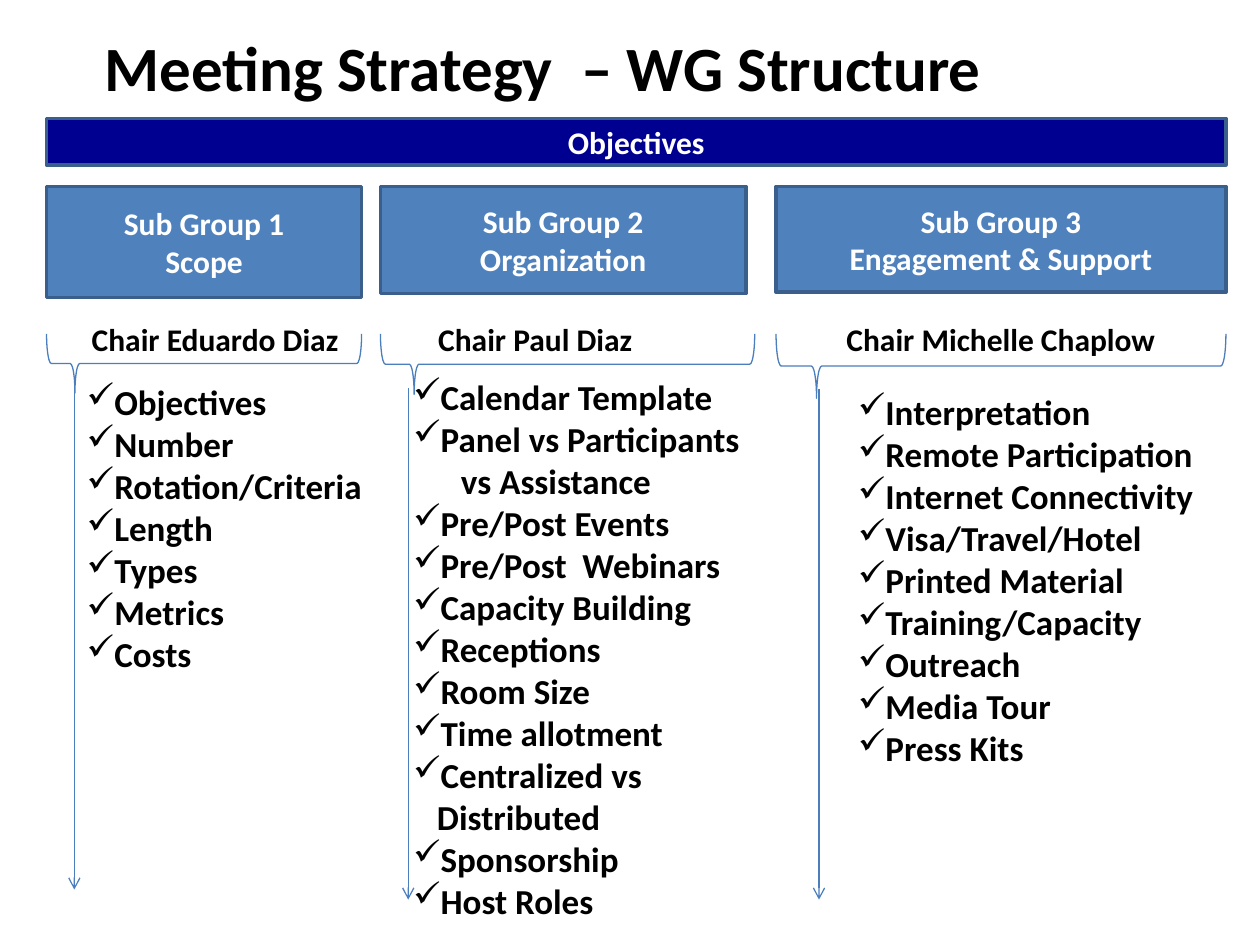
from dataclasses import dataclass

from lxml.etree import SubElement
from pptx import Presentation
from pptx.dml.color import RGBColor
from pptx.enum.shapes import MSO_CONNECTOR, MSO_SHAPE
from pptx.enum.text import MSO_ANCHOR, MSO_AUTO_SIZE, PP_ALIGN
from pptx.oxml.ns import qn
from pptx.util import Inches, Pt

BLACK = RGBColor(0x00, 0x00, 0x00)
WHITE = RGBColor(0xFF, 0xFF, 0xFF)
NAVY = RGBColor(0x00, 0x00, 0x90)
BLUE = RGBColor(0x4F, 0x81, 0xBD)
BORDER = RGBColor(0x3A, 0x5F, 0x8C)
THIN_BLUE = RGBColor(0x4B, 0x7E, 0xBC)

SLIDE_WIDTH, SLIDE_HEIGHT = Inches(10), Inches(7.5)
COLUMNS, ROWS = 100, 75
HANGING = Inches(0.19)
BOX_TOP, CHAIR_TOP, BRACE_TOP = 14.8, 24.9, 26.5


@dataclass(frozen=True)
class Area:
    """A rectangle in grid columns and rows."""
    left: float
    top: float
    width: float
    height: float

    def lengths(self) -> tuple[int, int, int, int]:
        """Return the left, top, width and height as slide lengths."""
        return across(self.left), down(self.top), across(self.width), down(self.height)


@dataclass(frozen=True)
class Item:
    """One list line, ticked unless it continues the line above."""
    text: str
    ticked: bool = True


@dataclass(frozen=True)
class SubGroup:
    """A column of the slide: heading box, chair, brace, arrow and list."""
    heading: tuple[str, str]
    box: Area
    chair: str
    chair_left: float
    brace: Area
    arrow: Area
    topics_area: Area
    topics: tuple[Item, ...]


def items(*texts: str) -> tuple[Item, ...]:
    """Make ticked items from plain texts."""
    return tuple(Item(text) for text in texts)


SUB_GROUPS = (
    SubGroup(
        ("Sub Group 1", "Scope"), Area(3.7, BOX_TOP, 25, 8.8),
        "Chair Eduardo Diaz", 6.3, Area(3.7, BRACE_TOP, 25, 4.7),
        Area(5.9, 30.9, 0, 39.7), Area(5.9, 29.7, 27.6, 27.9),
        items("Objectives", "Number", "Rotation/Criteria", "Length", "Types",
              "Metrics", "Costs"),
    ),
    SubGroup(
        ("Sub Group 2", "Organization"), Area(30.2, BOX_TOP, 29, 8.5),
        "Chair Paul Diaz", 33.8, Area(30.2, BRACE_TOP, 29.7, 4.8),
        Area(32.4, 30.8, 0, 40.6), Area(31.8, 29.3, 34, 46.7),
        (
            *items("Calendar Template", "Panel vs Participants"),
            Item("vs Assistance", ticked=False),
            *items("Pre/Post Events", "Pre/Post  Webinars", "Capacity Building",
                   "Receptions", "Room Size", "Time allotment",
                   "Centralized vs\vDistributed", "Sponsorship", "Host Roles"),
        ),
    ),
    SubGroup(
        ("Sub Group 3", "Engagement & Support"), Area(61.6, BOX_TOP, 35.7, 8.4),
        "Chair Michelle Chaplow", 66.2, Area(61.6, BRACE_TOP, 35.7, 5.1),
        Area(65, 30.9, 0, 40.5), Area(67.1, 30.5, 30.2, 35.3),
        items("Interpretation", "Remote Participation", "Internet Connectivity",
              "Visa/Travel/Hotel", "Printed Material", "Training/Capacity",
              "Outreach", "Media Tour", "Press Kits"),
    ),
)


def across(columns: float) -> int:
    """Convert grid columns to a slide length."""
    return round(SLIDE_WIDTH * columns / COLUMNS)


def down(rows: float) -> int:
    """Convert grid rows to a slide length."""
    return round(SLIDE_HEIGHT * rows / ROWS)


def write(para, text: str, *, size: float, color: RGBColor = BLACK,
          align=PP_ALIGN.LEFT, indent: int = 0, ticked: bool = False) -> None:
    """Put bold text in a paragraph, with an optional tick bullet."""
    properties = para._p.get_or_add_pPr()
    properties.set("marL", str(indent))
    properties.set("indent", str(-indent if ticked else 0))
    if ticked:
        SubElement(properties, qn("a:buChar")).set("char", "✓")
    para.alignment = align
    para.text = text
    for span in para.runs:
        span.font.name = "Calibri"
        span.font.size = Pt(size)
        span.font.bold = True
        span.font.color.rgb = color


def paragraph(frame, index: int):
    """Return the first paragraph, or a new one after it."""
    return frame.add_paragraph() if index else frame.paragraphs[0]


def add_text_frame(page, area: Area):
    """Add a wrapping text box and return its frame."""
    frame = page.shapes.add_textbox(*area.lengths()).text_frame
    frame.word_wrap = True
    frame.auto_size = MSO_AUTO_SIZE.SHAPE_TO_FIT_TEXT
    return frame


def add_box(page, area: Area, lines: tuple[str, ...], fill: RGBColor) -> None:
    """Add a filled rectangle with centred white lines."""
    box = page.shapes.add_shape(MSO_SHAPE.RECTANGLE, *area.lengths())
    box.shadow.inherit = False
    box.fill.solid()
    box.fill.fore_color.rgb = fill
    box.line.color.rgb = BORDER
    box.line.width = Pt(2)
    box.text_frame.vertical_anchor = MSO_ANCHOR.MIDDLE
    for index, line in enumerate(lines):
        write(paragraph(box.text_frame, index), line, size=18, color=WHITE,
              align=PP_ALIGN.CENTER)


def add_brace(page, area: Area) -> None:
    """Add a brace lying on its side that fills the area and points down."""
    left, top, width, height = area.lengths()
    shift = (width - height) // 2
    brace = page.shapes.add_shape(MSO_SHAPE.LEFT_BRACE, left + shift, top - shift,
                                  height, width)
    brace.rotation = 270
    brace.adjustments[0] = 0.08
    brace.adjustments[1] = 0.09
    brace.shadow.inherit = False
    brace.fill.background()
    brace.line.color.rgb = THIN_BLUE
    brace.line.width = Pt(0.75)


def add_arrow(page, area: Area) -> None:
    """Add a thin arrow from the area's top left to its bottom right."""
    left, top, width, height = area.lengths()
    arrow = page.shapes.add_connector(MSO_CONNECTOR.STRAIGHT, left, top,
                                      left + width, top + height)
    arrow.line.color.rgb = THIN_BLUE
    arrow.line.width = Pt(0.75)
    SubElement(arrow.line._get_or_add_ln(), qn("a:tailEnd")).set("type", "arrow")
    SubElement(arrow._element.spPr, qn("a:effectLst"))


def add_sub_group(page, group: SubGroup) -> None:
    """Draw every part of one sub group."""
    topics = add_text_frame(page, group.topics_area)
    for index, item in enumerate(group.topics):
        write(paragraph(topics, index), item.text, size=20, ticked=item.ticked,
              indent=HANGING if item.ticked else 2 * HANGING)
    add_brace(page, group.brace)
    add_arrow(page, group.arrow)
    chair = add_text_frame(page, Area(group.chair_left, CHAIR_TOP, 28, 4))
    write(chair.paragraphs[0], group.chair, size=18)
    add_box(page, group.box, group.heading, BLUE)


def main() -> None:
    """Build and save the deck."""
    deck = Presentation()
    deck.slide_width, deck.slide_height = SLIDE_WIDTH, SLIDE_HEIGHT
    page = deck.slides.add_slide(deck.slide_layouts[6])
    title = add_text_frame(page, Area(7.3, 1.8, 75.5, 7.1))
    write(title.paragraphs[0], "Meeting Strategy  – WG Structure", size=36)
    for group in SUB_GROUPS:
        add_sub_group(page, group)
    add_box(page, Area(3.7, 9.4, 93.6, 3.7), ("Objectives",), NAVY)
    deck.save("out.pptx")


if __name__ == "__main__":
    main()
